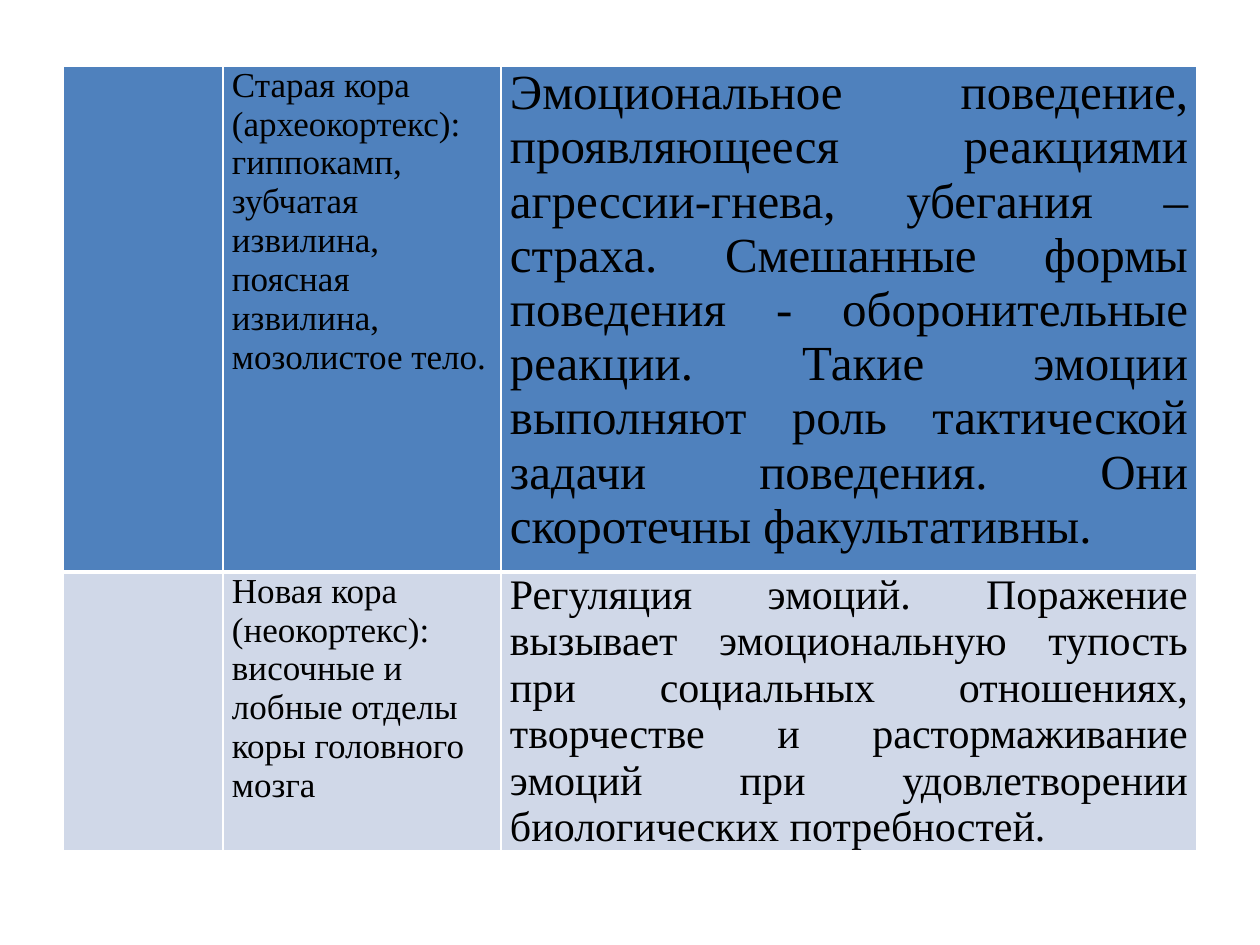
from pptx import Presentation
from pptx.dml.color import RGBColor
from pptx.enum.text import PP_ALIGN as Align
from pptx.oxml import parse_xml
from pptx.oxml.ns import nsdecls
from pptx.util import Emu, Pt

PX_PER_INCH = 126
FONT = "Times New Roman"
COLUMN_WIDTHS = (160, 278, 696)
ROW_HEIGHTS = (506, 279)
CORTEX_ROWS = (
    {
        "fill": "4F81BD",
        "borders": {"L": 1, "R": 1, "T": 1, "B": 3},
        "structure": "Старая кора (археокортекс): гиппокамп, зубчатая извилина, "
                     "поясная извилина, мозолистое тело.",
        "role": "Эмоциональное поведение, проявляющееся реакциями агрессии-гнева, "
                "убегания – страха. Смешанные формы поведения - оборонительные реакции. "
                "Такие эмоции выполняют роль тактической задачи поведения. "
                "Они скоротечны факультативны.",
        "role_size": 28,
    },
    {
        "fill": "D0D8E8",
        "borders": {"L": 1, "R": 1, "T": 3, "B": 1},
        "structure": "Новая кора (неокортекс): височные и лобные отделы коры "
                     "головного мозга",
        "role": "Регуляция эмоций. Поражение вызывает эмоциональную тупость при "
                "социальных отношениях, творчестве и растормаживание эмоций при "
                "удовлетворении биологических потребностей.",
        "role_size": 24,
    },
)


def px(length):
    """Turn pixels into EMU."""
    return Emu(round(length * 914400 / PX_PER_INCH))


def color(hex_code):
    """Turn a hex string into a colour."""
    return RGBColor.from_string(hex_code)


def style_cell(cell, fill, borders):
    """Give a cell white borders, a solid fill and its margins."""
    properties = cell._tc.get_or_add_tcPr()
    for side, width in borders.items():
        properties.append(parse_xml(
            f'<a:ln{side} {nsdecls("a")} w="{Pt(width)}"><a:solidFill>'
            f'<a:srgbClr val="FFFFFF"/></a:solidFill></a:ln{side}>'))
    cell.fill.solid()
    cell.fill.fore_color.rgb = color(fill)
    cell.margin_left = cell.margin_right = px(9)
    cell.margin_top = cell.margin_bottom = 0


def write_cell(cell, text, size, align):
    """Write one black paragraph into a cell."""
    paragraph = cell.text_frame.paragraphs[0]
    paragraph.text = text
    paragraph.alignment = align
    paragraph.font.size = Pt(size)
    for run in paragraph.runs:
        run.font.name = FONT
        run.font.size = Pt(size)
        run.font.color.rgb = color("000000")


def add_cortex_table(slide, left, top):
    """Place the table of cortex structures and their emotional roles."""
    frame = slide.shapes.add_table(
        len(ROW_HEIGHTS), len(COLUMN_WIDTHS), px(left), px(top),
        px(sum(COLUMN_WIDTHS)), px(sum(ROW_HEIGHTS)))
    table = frame.table
    table.first_row = table.horz_banding = False
    for column, width in zip(table.columns, COLUMN_WIDTHS):
        column.width = px(width)
    for row, height, cortex in zip(table.rows, ROW_HEIGHTS, CORTEX_ROWS):
        row.height = px(height)
        for cell in row.cells:
            style_cell(cell, cortex["fill"], cortex["borders"])
        write_cell(row.cells[1], cortex["structure"], 20, Align.LEFT)
        write_cell(row.cells[2], cortex["role"], cortex["role_size"], Align.JUSTIFY)


def main():
    """Build and save the slide."""
    deck = Presentation()
    deck.slide_width, deck.slide_height = px(1260), px(945)
    slide = deck.slides.add_slide(deck.slide_layouts[6])
    add_cortex_table(slide, 63, 66)
    deck.save("out.pptx")


if __name__ == "__main__":
    main()
